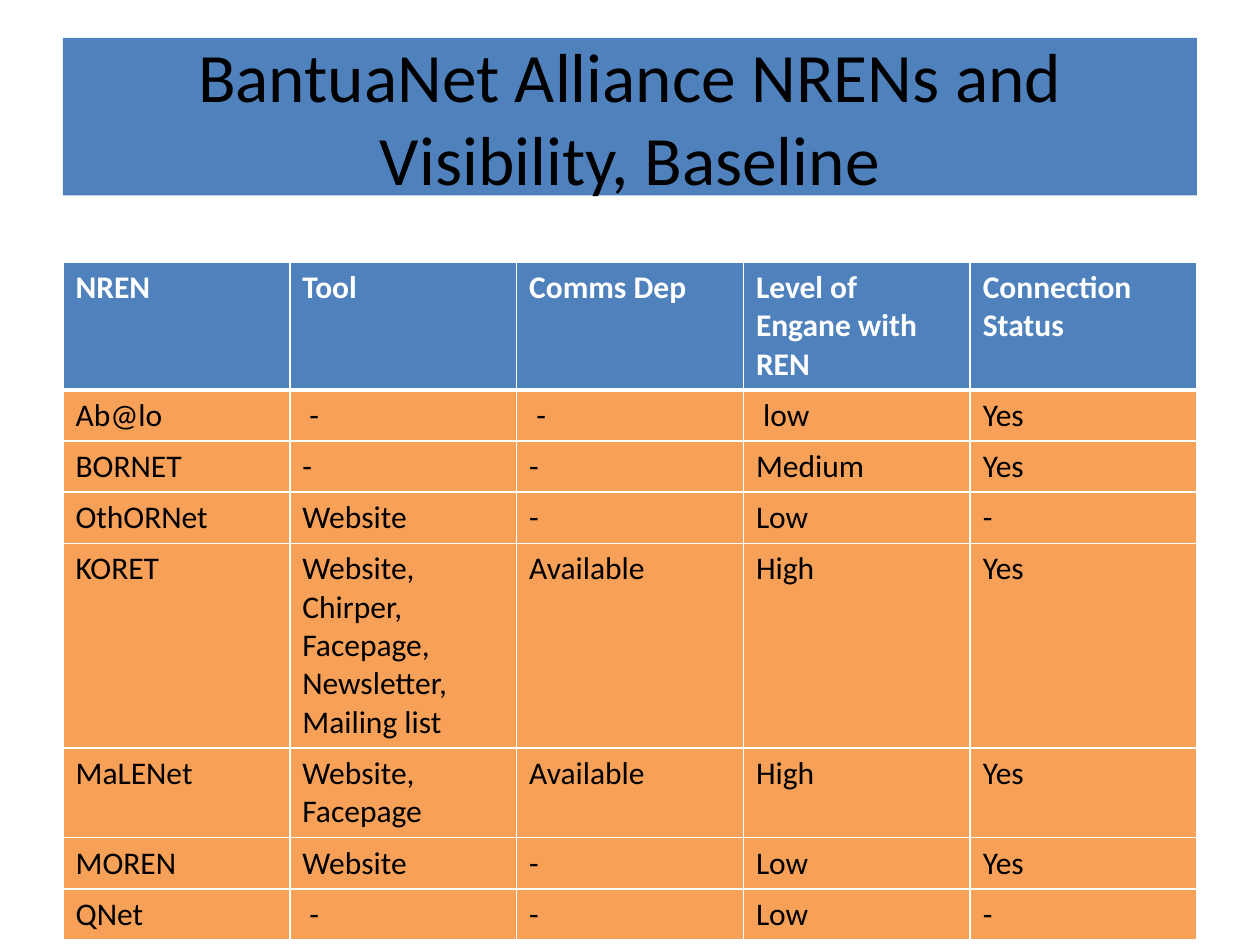
import lxml.etree
import pptx
import pptx.dml.color
import pptx.enum.shapes
import pptx.enum.text
import pptx.oxml.ns
import pptx.util

Inches = pptx.util.Inches
COLOURS = {"blue": "4F81BD", "orange": "F79646", "black": "000000", "white": "FFFFFF"}
HEADER = ["NREN", "Tool", "Comms Dep", "Level of Engane with REN", "Connection Status"]
NETWORKS = [
    ["Ab@lo", " -", " -", " low", "Yes"],
    ["BORNET", "-", "-", "Medium", "Yes"],
    ["OthORNet", "Website", "-", "Low", "-"],
    ["KORET", "Website, Chirper, Facepage, Newsletter, Mailing list", "Available", "High", "Yes"],
    ["MaLENet", "Website, Facepage", "Available", "High", "Yes"],
    ["MOREN", "Website", "-", "Low", "Yes"],
    ["QNet", " -", "-", "Low", "-"],
]
ROW_HEIGHTS = [0.97, 0.39, 0.39, 0.39, 1.55, 0.68, 0.39, 0.39]


class SlideBuilder:
    font_name = "Calibri"

    def __init__(self, slide):
        self.slide = slide

    def rgb(self, colour):
        return pptx.dml.color.RGBColor.from_string(COLOURS[colour])

    def xml_child(self, parent, tag, **attributes):
        return lxml.etree.SubElement(parent, pptx.oxml.ns.qn(tag), attributes)

    def add_text(self, frame, text, size, colour, bold=False, align=None):
        para = frame.paragraphs[0]
        para.alignment = align
        span = para.add_run()
        span.text = text
        formats = {"name": self.font_name, "size": pptx.util.Pt(size), "bold": bold}
        for name, value in formats.items():
            setattr(span.font, name, value)
        span.font.color.rgb = self.rgb(colour)

    def title(self, text, left, top, width, height):
        box = self.slide.shapes.add_shape(
            pptx.enum.shapes.MSO_SHAPE.RECTANGLE,
            Inches(left), Inches(top), Inches(width), Inches(height))
        box.shadow.inherit = False
        box.fill.solid()
        box.fill.fore_color.rgb = self.rgb("blue")
        box.line.fill.background()
        frame = box.text_frame
        frame.word_wrap = True
        frame.vertical_anchor = pptx.enum.text.MSO_ANCHOR.MIDDLE
        self.add_text(frame, text, 39.6, "black", align=pptx.enum.text.PP_ALIGN.CENTER)

    def borders(self, cell, widths):
        """Draw white cell edges; widths maps the edge letters L, R, T, B to points."""
        properties = cell._tc.get_or_add_tcPr()
        for edge, width in widths.items():
            line = self.xml_child(properties, f"a:ln{edge}", w=str(pptx.util.Pt(width)))
            fill = self.xml_child(line, "a:solidFill")
            self.xml_child(fill, "a:srgbClr", val=COLOURS["white"])

    def fill_cell(self, cell, colour, opacity):
        """Fill a cell; opacity is a whole percentage."""
        cell.fill.solid()
        cell.fill.fore_color.rgb = self.rgb(colour)
        if opacity < 100:
            shade = cell._tc.tcPr.find(pptx.oxml.ns.qn("a:solidFill"))[0]
            self.xml_child(shade, "a:alpha", val=str(opacity * 1000))

    def table(self, rows, left, top, width, heights):
        table = self.slide.shapes.add_table(
            len(rows), len(rows[0]), Inches(left), Inches(top),
            Inches(width), Inches(sum(heights))).table
        for column in table.columns:
            column.width = Inches(width / len(rows[0]))
        for index, (texts, height) in enumerate(zip(rows, heights)):
            table.rows[index].height = Inches(height)
            header = index == 0
            edges = {"L": 1, "R": 1, "T": 3 if index == 1 else 1, "B": 3 if header else 1}
            fill, opacity, colour = ("blue", 100, "white") if header else ("orange", 90, "black")
            for cell, text in zip(table.rows[index].cells, texts):
                self.borders(cell, edges)
                self.fill_cell(cell, fill, opacity)
                self.add_text(cell.text_frame, text, 18, colour, header)


def main():
    deck = pptx.Presentation()
    deck.slide_width, deck.slide_height = Inches(10), Inches(7.5)
    builder = SlideBuilder(deck.slides.add_slide(deck.slide_layouts[6]))
    builder.title("BantuaNet Alliance NRENs and Visibility, Baseline", 0.5, 0.3, 9, 1.25)
    builder.table([HEADER] + NETWORKS, 0.5, 2.08, 9, ROW_HEIGHTS)
    deck.save("out.pptx")


if __name__ == "__main__":
    main()
